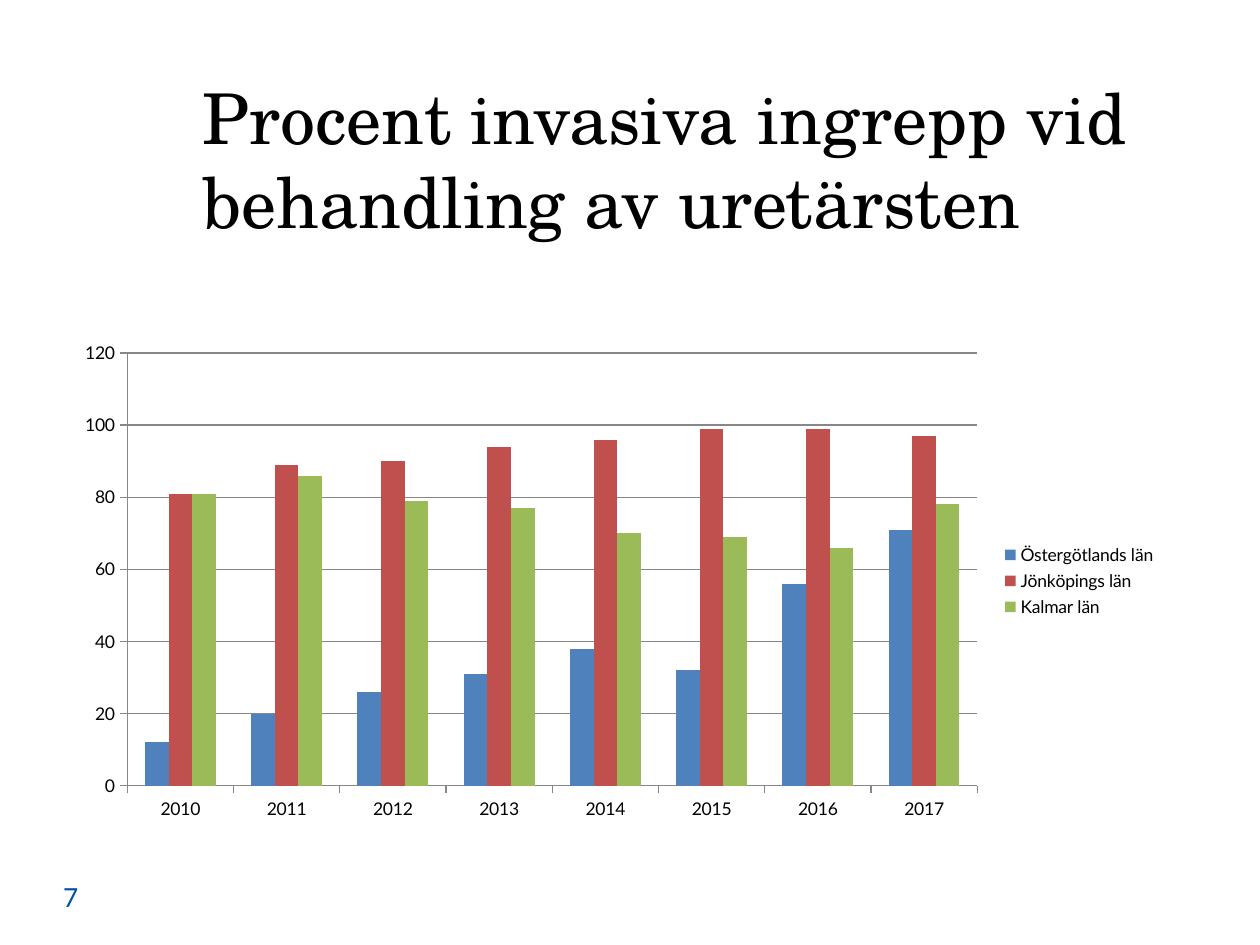
from dataclasses import dataclass

from pptx import Presentation
from pptx.chart.data import CategoryChartData
from pptx.dml.color import RGBColor
from pptx.enum.chart import XL_CHART_TYPE as ChartType
from pptx.enum.chart import XL_LEGEND_POSITION as LegendPosition
from pptx.enum.chart import XL_TICK_MARK as TickMark
from pptx.enum.text import MSO_ANCHOR as Anchor
from pptx.enum.text import PP_ALIGN as Align
from pptx.util import Inches, Pt

COLORS = {
    "text": "000000",
    "number": "0050A5",
    "grid": "878787",
    "blue": "4F81BD",
    "red": "C0504D",
    "green": "9BBB59",
}
TITLE_FONT = "TeX Gyre Schola"
BODY_FONT = "Lato"


@dataclass
class County:
    name: str
    percents: list[int]
    color: str


YEARS = [str(year) for year in range(2010, 2018)]
COUNTIES = [
    County("Östergötlands län", [12, 20, 26, 31, 38, 32, 56, 71], "blue"),
    County("Jönköpings län", [81, 89, 90, 94, 96, 99, 99, 97], "red"),
    County("Kalmar län", [81, 86, 79, 77, 70, 69, 66, 78], "green"),
]


def rgb(name: str) -> RGBColor:
    return RGBColor.from_string(COLORS[name])


def style_font(font, name: str, size: float, color: str) -> None:
    font.name = name
    font.size = Pt(size)
    font.bold = False
    font.color.rgb = rgb(color)


def write_text(box, text: str, align, anchor, font: str, size: float,
               color: str) -> None:
    frame = box.text_frame
    frame.word_wrap = True
    frame.vertical_anchor = anchor
    para = frame.paragraphs[0]
    para.alignment = align
    span = para.add_run()
    span.text = text
    style_font(span.font, font, size, color)


def style_axis(axis) -> None:
    axis.major_tick_mark = TickMark.OUTSIDE
    axis.minor_tick_mark = TickMark.NONE
    axis.format.line.color.rgb = rgb("grid")
    axis.format.line.width = Pt(0.75)


def add_county_chart(page, counties: list[County]) -> None:
    data = CategoryChartData(number_format="0")
    data.categories = YEARS
    for county in counties:
        data.add_series(county.name, county.percents)
    chart = page.shapes.add_chart(
        ChartType.COLUMN_CLUSTERED, Inches(0.5), Inches(2.64),
        Inches(8.78), Inches(3.94), data).chart
    style_font(chart.font, BODY_FONT, 10, "text")
    chart.has_title = False

    # Legend
    chart.has_legend = True
    chart.legend.position = LegendPosition.RIGHT
    chart.legend.include_in_layout = False

    # Axes
    values = chart.value_axis
    for axis in (chart.category_axis, values):
        style_axis(axis)
    values.minimum_scale, values.maximum_scale = 0, 120
    values.major_unit = 20
    values.tick_labels.number_format = "0"
    values.tick_labels.number_format_is_linked = False
    values.has_major_gridlines = True
    values.major_gridlines.format.line.color.rgb = rgb("grid")
    values.major_gridlines.format.line.width = Pt(0.75)

    # Columns
    plot = chart.plots[0]
    plot.gap_width = 150
    plot.overlap = 0
    plot.vary_by_categories = False
    for series, county in zip(plot.series, counties):
        series.format.fill.solid()
        series.format.fill.fore_color.rgb = rgb(county.color)


def main() -> None:
    deck = Presentation()
    deck.slide_width, deck.slide_height = Inches(10), Inches(7.5)
    page = deck.slides.add_slide(deck.slide_layouts[5])

    # Title
    title = page.shapes.title
    title.left, title.top = Inches(1.51), Inches(0.57)
    title.width, title.height = Inches(7.76), Inches(1.38)
    write_text(title, "Procent invasiva ingrepp vid behandling av uretärsten",
               Align.LEFT, Anchor.MIDDLE, TITLE_FONT, 40, "text")

    # Page number
    number = page.shapes.add_textbox(
        Inches(0.17), Inches(6.89), Inches(0.55), Inches(0.4))
    write_text(number, "7", Align.RIGHT, Anchor.BOTTOM, BODY_FONT, 15, "number")

    add_county_chart(page, COUNTIES)
    deck.save("out.pptx")


if __name__ == "__main__":
    main()
